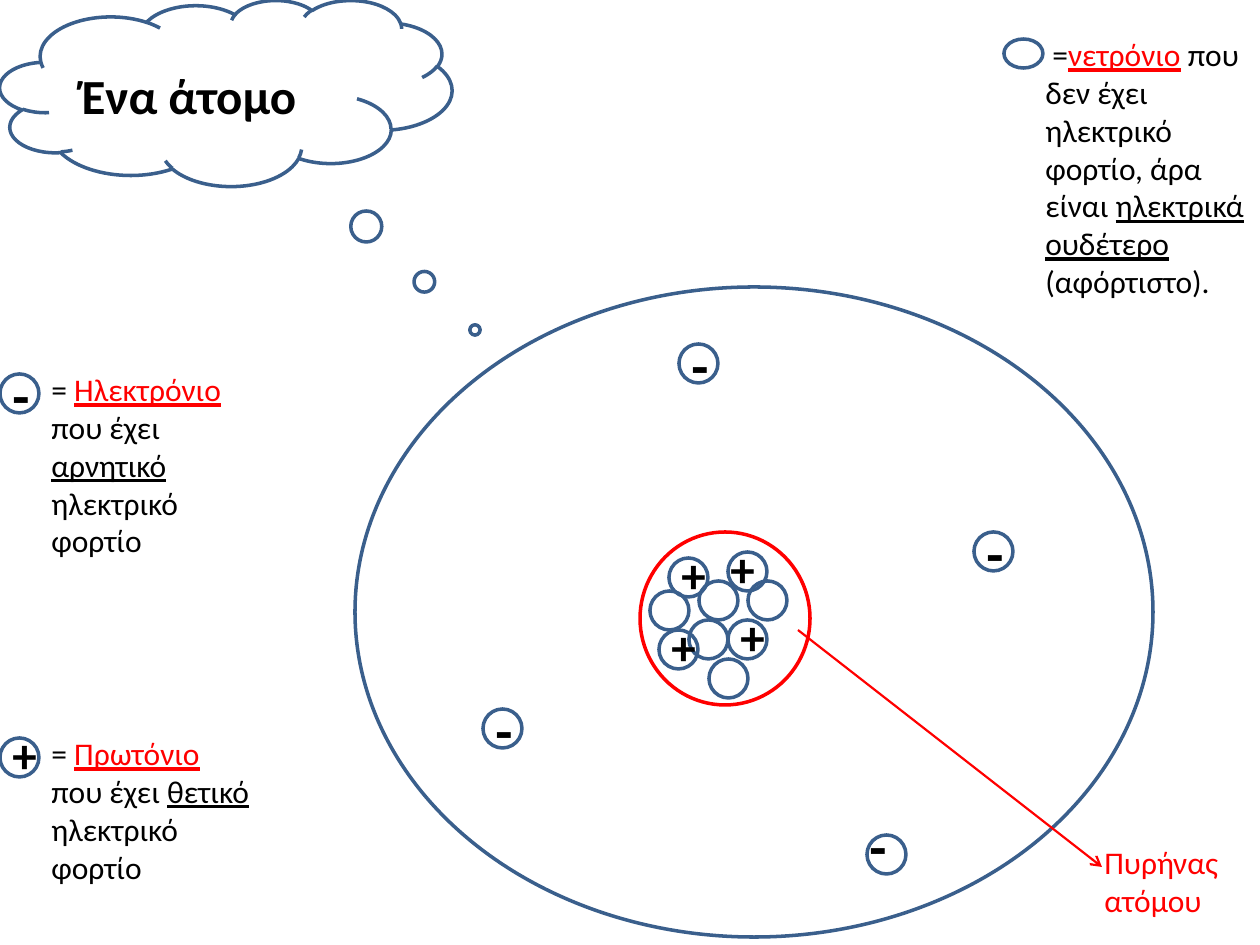
import pptx
import pptx.util
import pptx.dml.color
import pptx.enum.shapes
import pptx.enum.text
import pptx.oxml.ns
import lxml.etree

COLORS = {"outline": "3A5F8C", "accent": "FF0000", "text": "000000"}
FONT = "Calibri"
PX_PER_INCH = 126
PARTICLE = 39

TITLE = ("Ένα άτομο", (69, 59, 335, 72))
CLOUD = (0, 0, 452, 186)
CLOUD_TAIL = (0.551, 1.274)
ATOM = (355, 287, 798, 650)
NUCLEUS = (640, 532, 170, 173)
NUCLEUS_ARROW = (798, 630, 1102, 867)
LEGEND_NEUTRON = (1004, 39, 39, 29)

NEUTRONS = [(689, 620), (748, 581), (699, 581), (650, 591), (709, 659)]
CHARGED = {
    "-": {
        "size": 32, "height": 81,
        "particles": [
            (974, 532, 0, -20, 49), (483, 709, 0, -20, 49),
            (679, 344, 0, -20, 49), (867, 835, -10, -30, 49),
            (0, 374, 0, -20, 49),
        ],
    },
    "+": {
        "size": 28, "height": 72,
        "particles": [
            (728, 620, 0, -20, 49), (728, 552, -10, -20, 29),
            (659, 630, 0, -20, 29), (669, 558, 0, -20, 29),
            (0, 738, 0, -20, 49),
        ],
    },
}

PLAIN, TERM, STRESS = ("text", False), ("accent", True), ("text", True)
LABELS = [
    ((39, 364, 227, 204), [
        ("= ", PLAIN), ("Ηλεκτρόνιο", TERM), (" που έχει ", PLAIN),
        ("αρνητικό", STRESS), (" ηλεκτρικό φορτίο", PLAIN)]),
    ((39, 728, 227, 165), [
        ("= ", PLAIN), ("Πρωτόνιο", TERM), (" που έχει ", PLAIN),
        ("θετικό", STRESS), (" ηλεκτρικό φορτίο", PLAIN)]),
    ((1033, 29, 227, 280), [
        (" =", PLAIN), ("νετρόνιο", TERM),
        (" που δεν έχει ηλεκτρικό φορτίο, άρα είναι ", PLAIN),
        ("ηλεκτρικά ουδέτερο ", STRESS), ("(αφόρτιστο).", PLAIN)]),
    ((1092, 837, 147, 89), [("Πυρήνας ατόμου", ("accent", False))]),
]


def px(value):
    return pptx.util.Emu(round(value * 914400 / PX_PER_INCH))


def color(name):
    return pptx.dml.color.RGBColor.from_string(COLORS[name])


def add_outline(page, kind, frame, line="outline"):
    shape = page.shapes.add_shape(kind, *map(px, frame))
    shape.shadow.inherit = False
    shape.fill.background()
    shape.line.color.rgb = color(line)
    shape.line.width = pptx.util.Pt(2)
    return shape


def add_circle(page, frame, line="outline"):
    return add_outline(page, pptx.enum.shapes.MSO_SHAPE.OVAL, frame, line)


def write(box, spans, size, bold=False):
    frame = box.text_frame
    frame.word_wrap = True
    frame.auto_size = pptx.enum.text.MSO_AUTO_SIZE.NONE
    frame.vertical_anchor = pptx.enum.text.MSO_ANCHOR.TOP
    para = frame.paragraphs[0]
    para.alignment = pptx.enum.text.PP_ALIGN.LEFT
    para.font.name = FONT
    para.font.size = pptx.util.Pt(size)
    para.font.bold = bold
    for text, (shade, underline) in spans:
        span = para.add_run()
        span.text = text
        span.font.color.rgb = color(shade)
        span.font.underline = underline


def add_text(page, frame, spans, size, bold=False):
    write(page.shapes.add_textbox(*map(px, frame)), spans, size, bold)


def add_arrow(page, ends):
    arrow = page.shapes.add_connector(
        pptx.enum.shapes.MSO_CONNECTOR.STRAIGHT, *map(px, ends))
    arrow.line.color.rgb = color("accent")
    arrow.line.width = pptx.util.Pt(1.25)
    qn = pptx.oxml.ns.qn
    lxml.etree.SubElement(arrow.line._get_or_add_ln(), qn("a:tailEnd"), type="arrow")
    lxml.etree.SubElement(arrow._element.spPr, qn("a:effectLst"))


def main():
    deck = pptx.Presentation()
    deck.slide_width, deck.slide_height = px(1260), px(945)
    page = deck.slides.add_slide(deck.slide_layouts[5])

    text, frame = TITLE
    title = page.shapes.title
    title.left, title.top, title.width, title.height = map(px, frame)
    write(title, [(text, PLAIN)], 28, True)

    cloud = add_outline(page, pptx.enum.shapes.MSO_SHAPE.CLOUD_CALLOUT, CLOUD)
    for index, value in enumerate(CLOUD_TAIL):
        cloud.adjustments[index] = value

    add_circle(page, ATOM)
    add_circle(page, LEGEND_NEUTRON)
    for left, top in NEUTRONS:
        add_circle(page, (left, top, PARTICLE, PARTICLE))
    for sign, style in CHARGED.items():
        for left, top, shift_x, shift_y, width in style["particles"]:
            add_circle(page, (left, top, PARTICLE, PARTICLE))
            add_text(page, (left + shift_x, top + shift_y, width, style["height"]),
                     [(sign, PLAIN)], style["size"], True)

    for frame, spans in LABELS:
        add_text(page, frame, spans, 18)
    add_circle(page, NUCLEUS, "accent")
    add_arrow(page, NUCLEUS_ARROW)
    deck.save("out.pptx")


if __name__ == "__main__":
    main()
